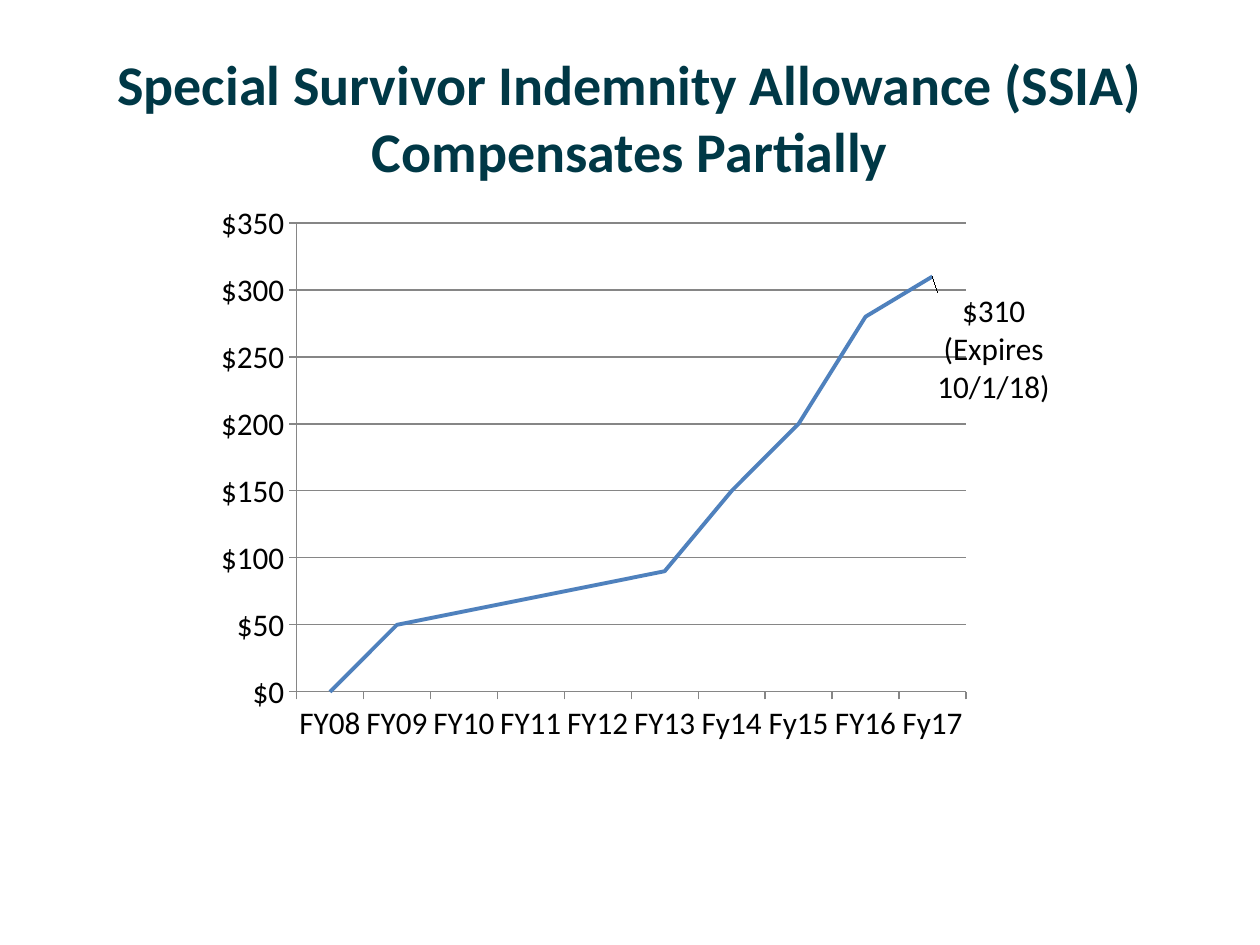
import pptx
import pptx.util
import pptx.chart.data
import pptx.dml.color
import pptx.enum.chart
import pptx.enum.text
import pptx.oxml
import pptx.oxml.ns

Pt = pptx.util.Pt
NS = pptx.oxml.ns.nsdecls("c")


def tint(code):
    return pptx.dml.color.RGBColor.from_string(code)


def layout(**parts):
    tags = "".join(f'<c:{tag} val="{val}"/>' for tag, val in parts.items())
    return pptx.oxml.parse_xml(
        f"<c:layout {NS}><c:manualLayout>{tags}</c:manualLayout></c:layout>")


class Deck:
    face = "Calibri"
    dark = "003846"
    ink = "000000"
    rule = "868686"
    hues = ["4F81BD", "C0504D", "9BBB59"]

    def __init__(self):
        self.show = pptx.Presentation()
        self.show.slide_width = Pt(720)
        self.show.slide_height = Pt(540)
        self.slide = self.show.slides.add_slide(self.show.slide_layouts[5])

    def style(self, font, size, color, bold=False):
        font.name = self.face
        font.size = Pt(size)
        font.bold = bold
        font.color.rgb = tint(color)

    def title(self, text, left, top, width, height):
        box = self.slide.shapes.title
        box.left, box.top = Pt(left), Pt(top)
        box.width, box.height = Pt(width), Pt(height)
        frame = box.text_frame
        frame.text = text
        frame.word_wrap = True
        frame.vertical_anchor = pptx.enum.text.MSO_ANCHOR.MIDDLE
        para = frame.paragraphs[0]
        para.alignment = pptx.enum.text.PP_ALIGN.CENTER
        self.style(para.runs[0].font, 32, self.dark, True)

    def stroke(self, line, color, width):
        line.color.rgb = tint(color)
        line.width = Pt(width)

    def chart(self, names, rows, left, top, width, height):
        data = pptx.chart.data.CategoryChartData()
        data.categories = names
        for number, row in enumerate(rows, 1):
            data.add_series(f"Series {number}", row)
        chart = self.slide.shapes.add_chart(
            pptx.enum.chart.XL_CHART_TYPE.LINE,
            Pt(left), Pt(top), Pt(width), Pt(height), data).chart
        chart.has_legend = False
        chart.has_title = False
        self.style(chart.font, 18, self.ink)
        plot = chart.plots[0]
        plot.vary_by_categories = False
        area = chart._chartSpace.chart.plotArea
        for old in area.findall(pptx.oxml.ns.qn("c:layout")):
            area.remove(old)
        area.insert(0, layout(layoutTarget="inner", xMode="edge", yMode="edge",
                              x=50 / width, y=17 / height,
                              w=387 / width, h=268 / height))
        for axis in (chart.category_axis, chart.value_axis):
            axis.major_tick_mark = pptx.enum.chart.XL_TICK_MARK.OUTSIDE
            axis.minor_tick_mark = pptx.enum.chart.XL_TICK_MARK.NONE
            self.stroke(axis.format.line, self.rule, 0.75)
        axis = chart.value_axis
        axis.minimum_scale, axis.maximum_scale, axis.major_unit = 0, 350, 50
        axis.tick_labels.number_format = '"$"#,##0'
        axis.tick_labels.number_format_is_linked = False
        axis.has_major_gridlines = True
        self.stroke(axis.major_gridlines.format.line, self.rule, 0.75)
        for line, hue in zip(plot.series, self.hues):
            line.smooth = False
            line.marker.style = pptx.enum.chart.XL_MARKER_STYLE.NONE
            self.stroke(line.format.line, hue, 2.25)
        return plot.series[0]

    def label(self, line, index, text, down):
        tags = line.data_labels
        tags.show_value = False
        tag = line.points[index].data_label
        tag.text_frame.text = text
        for para in tag.text_frame.paragraphs:
            self.style(para.runs[0].font, 18, self.ink)
        tag.position = pptx.enum.chart.XL_LABEL_POSITION.RIGHT
        node = tags._element.find(pptx.oxml.ns.qn("c:dLbl"))
        for old in node.findall(pptx.oxml.ns.qn("c:layout")):
            node.remove(old)
        node.insert(1, layout(x=0, y=down))
        tags._element.append(pptx.oxml.parse_xml(
            f'<c:extLst {NS}><c:ext uri="{{CE6537A1-D6FC-4f65-9D91-7224C49458BB}}"'
            ' xmlns:c15="http://schemas.microsoft.com/office/drawing/2012/chart">'
            '<c15:showLeaderLines val="1"/></c:ext></c:extLst>'))


def main():
    deck = Deck()
    deck.title("Special Survivor Indemnity Allowance (SSIA) Compensates Partially",
               36, 21.6, 648, 90)
    names = ["FY08", "FY09", "FY10", "FY11", "FY12",
             "FY13", "Fy14", "Fy15", "FY16", "Fy17"]
    rows = [[0, 50, 60, 70, 80, 90, 150, 200, 280, 310], [0], [0]]
    line = deck.chart(names, rows, 120, 110.4, 480, 320)
    deck.label(line, 9, "$310\n(Expires\n10/1/18)", 0.13)
    deck.show.save("out.pptx")


if __name__ == "__main__":
    main()
